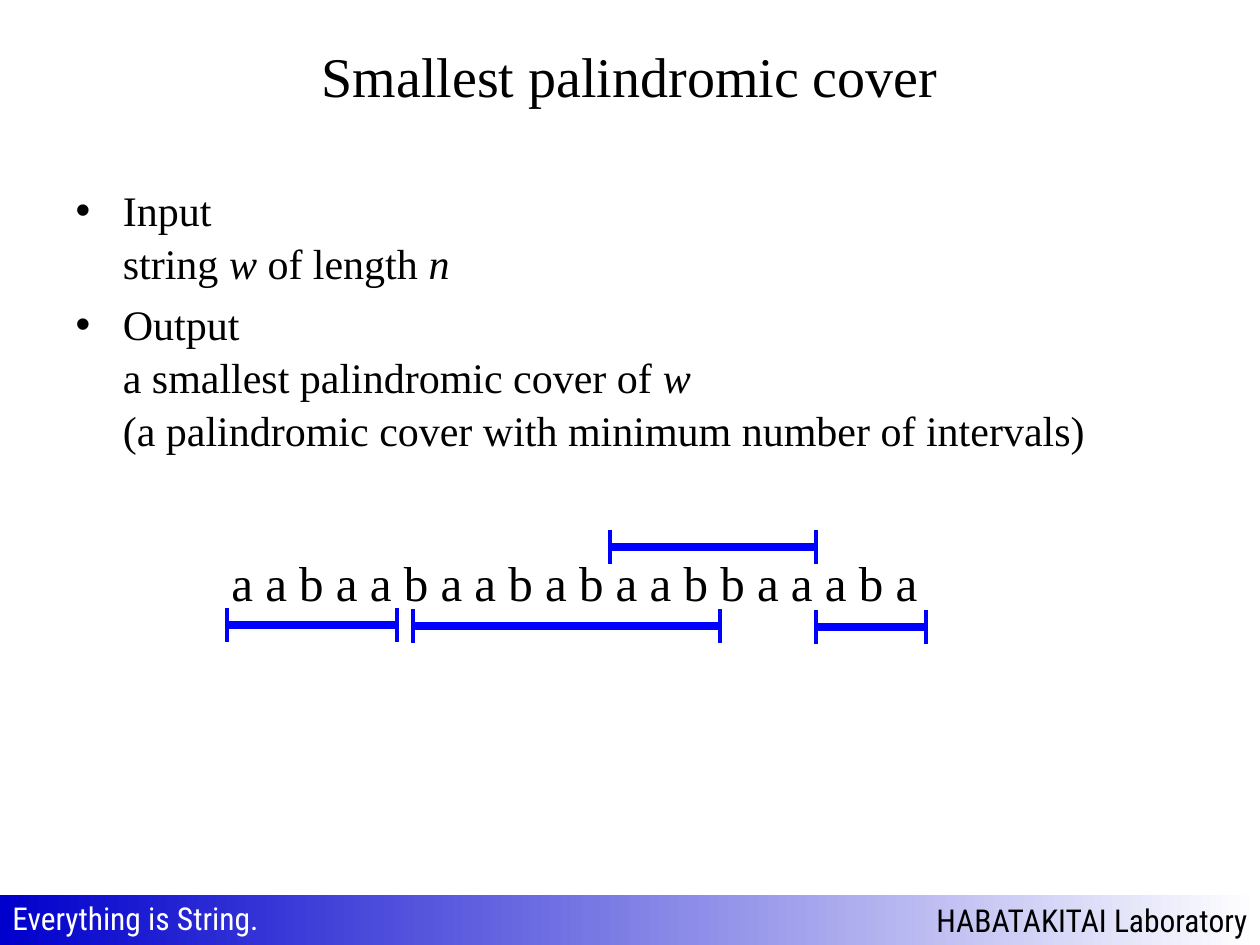
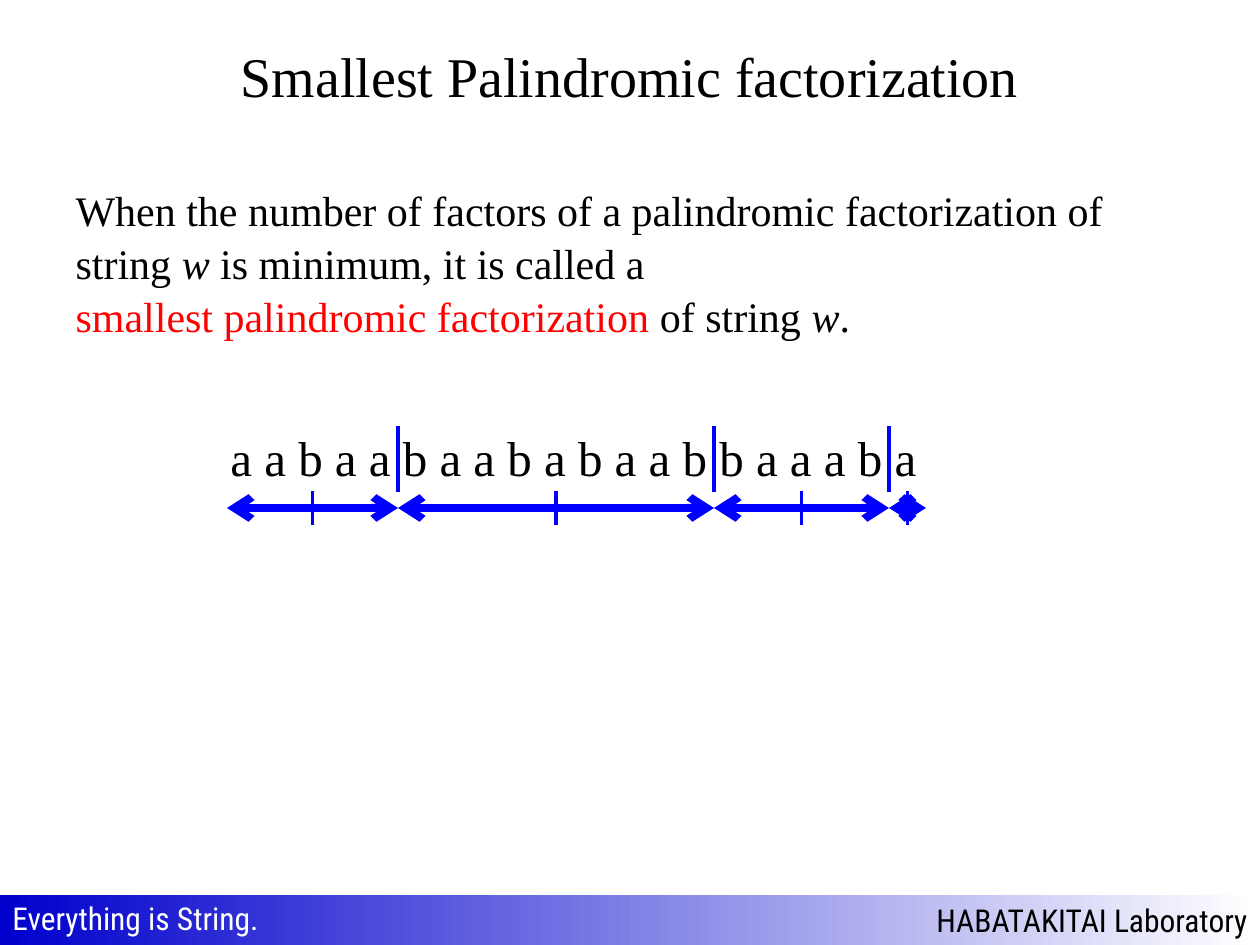
from lxml.etree import SubElement
from pptx import Presentation
from pptx.dml.color import RGBColor
from pptx.enum.shapes import MSO_CONNECTOR as Connector, MSO_SHAPE as Shape
from pptx.enum.text import MSO_ANCHOR as Anchor, MSO_AUTO_SIZE as AutoSize, PP_ALIGN as Align
from pptx.oxml.ns import qn
from pptx.util import Inches, Pt

BLACK = RGBColor(0x00, 0x00, 0x00)
WHITE = RGBColor(0xFF, 0xFF, 0xFF)
RED = RGBColor(0xFF, 0x00, 0x00)
BLUE = RGBColor(0x00, 0x00, 0xFF)
BAND_BLUE = RGBColor(0x00, 0x00, 0xCC)
SERIF, CONDENSED = "Times New Roman", "Roboto Condensed"

SLIDE_WIDTH, SLIDE_HEIGHT = 1260, 945
TICK_HALF = 17
THICK, THIN = 4.5, 2.25
WORD = "a a b a a b a a b a b a a b b a a a b a"


def px(*lengths):
    return [round(length * Inches(1) / 126) for length in lengths]


# Text
def add_run(paragraph, text, size, font=SERIF, color=BLACK, italic=False):
    """Add a run; each newline in the text becomes a line break of the same size."""
    for index, piece in enumerate(text.split("\n")):
        if index:
            paragraph.add_line_break()
            SubElement(paragraph._p[-1], qn("a:rPr"), sz=str(size * 100))
        if piece:
            run = paragraph.add_run()
            run.text = piece
            run.font.size = Pt(size)
            run.font.name = font
            run.font.color.rgb = color
            run.font.italic = italic


def place(shape, left, top, width, height):
    shape.left, shape.top, shape.width, shape.height = px(left, top, width, height)
    shape.text_frame.auto_size = AutoSize.NONE


def add_label(slide, box, text, size, **style):
    frame = slide.shapes.add_textbox(*px(*box)).text_frame
    frame.word_wrap = False
    frame.auto_size = AutoSize.SHAPE_TO_FIT_TEXT
    add_run(frame.paragraphs[0], text, size, **style)


def fill_title(slide, text):
    title = slide.shapes.title
    place(title, 63, 16, 1134, 118)
    title.text_frame.vertical_anchor = Anchor.MIDDLE
    paragraph = title.text_frame.paragraphs[0]
    paragraph.alignment = Align.CENTER
    add_run(paragraph, text, 32)


def fill_body(slide, width, paragraphs, bulleted=True):
    body = slide.placeholders[1]
    place(body, 63, 176, width, 668)
    frame = body.text_frame
    for index, runs in enumerate(paragraphs):
        paragraph = frame.add_paragraph() if index else frame.paragraphs[0]
        paragraph.line_spacing = 1.05
        if not bulleted:
            properties = paragraph._p.get_or_add_pPr()
            properties.set("marL", "0")
            properties.set("indent", "0")
            SubElement(properties, qn("a:buNone"))
        for text, style in runs:
            add_run(paragraph, text, 24, **style)


# Footer band
def add_footer(slide):
    band = slide.shapes.add_shape(Shape.RECTANGLE, *px(0, 895, SLIDE_WIDTH, 50))
    band.shadow.inherit = False
    band.line.fill.background()
    band.fill.gradient()
    band.fill.gradient_angle = 0
    for stop, position, color in zip(band.fill.gradient_stops, (0, 1), (BAND_BLUE, WHITE)):
        stop.position = position
        stop.color.rgb = color
    frame = band.text_frame
    frame.word_wrap = False
    frame.vertical_anchor = Anchor.MIDDLE
    frame.paragraphs[0].alignment = Align.RIGHT
    add_run(frame.paragraphs[0], "HABATAKITAI Laboratory", 18, font=CONDENSED)
    add_label(slide, (0, 893, 280, 50), "Everything is String.", 18,
              font=CONDENSED, color=WHITE)


# Lines
def add_line(slide, start, end, weight, arrows=False):
    line = slide.shapes.add_connector(Connector.STRAIGHT, *px(*start, *end))
    line.line.color.rgb = BLUE
    line.line.width = Pt(weight)
    if arrows:
        for tag in ("a:headEnd", "a:tailEnd"):
            SubElement(line.line._get_or_add_ln(), qn(tag), type="arrow")
    SubElement(line._element.spPr, qn("a:effectLst"))


def add_tick(slide, x, y, half=TICK_HALF):
    add_line(slide, (x, y - half), (x, y + half), THIN)


def add_interval(slide, left, right, y):
    add_line(slide, (left, y), (right, y), THICK)
    for x in (left, right):
        add_tick(slide, x, y)


def add_factor(slide, left, right, y):
    add_line(slide, (left, y), (right, y), THICK, arrows=True)
    add_tick(slide, (left + right) / 2, y)


def add_base_slide(presentation, title):
    slide = presentation.slides.add_slide(presentation.slide_layouts[1])
    add_footer(slide)
    fill_title(slide, title)
    return slide


def build_cover_slide(presentation):
    slide = add_base_slide(presentation, "Smallest palindromic cover")
    italic = {"italic": True}
    fill_body(slide, 1134, [
        [("Input\nstring ", {}), ("w", italic), (" of length ", {}), ("n", italic)],
        [("Output\na smallest palindromic cover of ", {}), ("w\n", italic),
         ("(a palindromic cover with minimum number of intervals)", {})],
    ])
    for left, right, y in ((227, 397, 625), (413, 720, 626),
                           (610, 816, 547), (816, 926, 627)):
        add_interval(slide, left, right, y)
    add_label(slide, (219, 546, 747, 72), WORD, 28)


def build_factorization_slide(presentation):
    slide = add_base_slide(presentation, "Smallest Palindromic factorization")
    italic = {"italic": True}
    fill_body(slide, 1155, [[
        ("When the number of factors of a palindromic factorization of string ", {}),
        ("w", italic), (" is minimum, it is called a \n", {}),
        ("smallest palindromic factorization ", {"color": RED}),
        ("of string ", {}), ("w", italic), (".", {}),
    ]], bulleted=False)
    add_label(slide, (218, 421, 747, 72), WORD, 28)
    boundaries = (227, 398, 714, 889, 926)
    for x in boundaries[1:-1]:
        add_tick(slide, x, 459, half=33)
    for left, right in zip(boundaries, boundaries[1:]):
        add_factor(slide, left, right, 508)


def main():
    presentation = Presentation()
    presentation.slide_width, presentation.slide_height = px(SLIDE_WIDTH, SLIDE_HEIGHT)
    build_cover_slide(presentation)
    build_factorization_slide(presentation)
    presentation.save("out.pptx")


if __name__ == "__main__":
    main()
